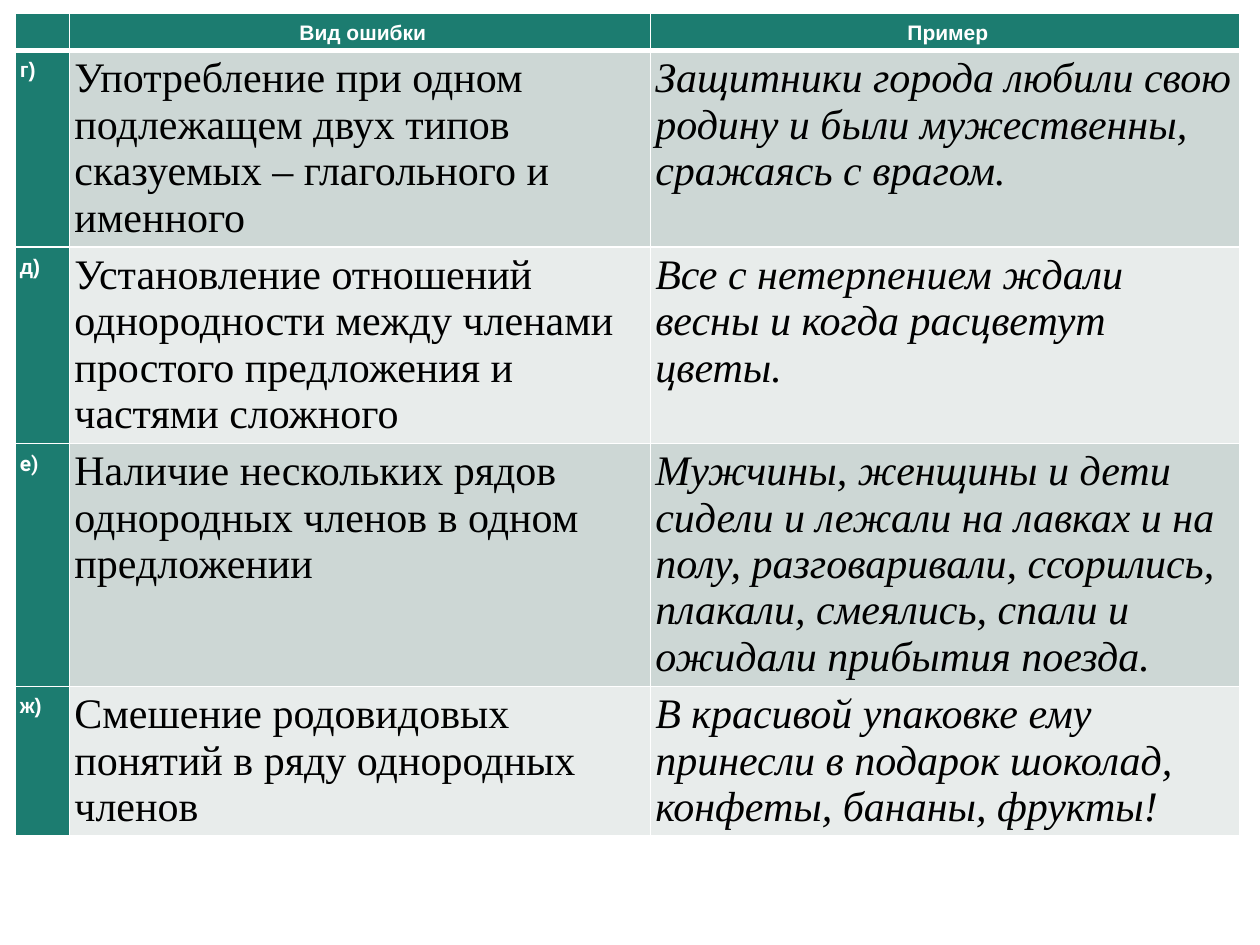
from lxml.etree import fromstring
from pptx import Presentation
from pptx.dml.color import RGBColor
from pptx.enum.text import PP_ALIGN
from pptx.oxml.ns import nsdecls
from pptx.util import Cm, Pt

COLORS = {
    "teal": "1C7C70",
    "dark_band": "CDD7D5",
    "light_band": "E8ECEB",
    "white": "FFFFFF",
    "black": "000000",
}
HEADERS = ["", " Вид ошибки", " Пример"]
ERRORS = [
    ("г)", "Употребление при одном подлежащем двух типов сказуемых – глагольного и именного",
     "Защитники города любили свою родину и были мужественны, сражаясь с врагом.", 4),
    ("д)", "Установление отношений однородности между членами простого предложения и частями сложного",
     "Все с нетерпением ждали весны и когда расцветут цветы.", 4),
    ("е)", "Наличие нескольких рядов однородных членов в одном предложении",
     "Мужчины, женщины и дети сидели и лежали на лавках и на полу, разговаривали, "
     "ссорились, плакали, смеялись, спали и ожидали прибытия поезда.", 5),
    ("ж)", "Смешение родовидовых понятий в ряду однородных членов",
     "В красивой упаковке ему принесли в подарок шоколад, конфеты, бананы, фрукты!", 3),
]


def write(tf, text, font="Times New Roman", size=24, color="black", bold=False,
          italic=False, align=PP_ALIGN.LEFT, spacing=1.0):
    p = tf.paragraphs[0]
    p.alignment = align
    p.line_spacing = spacing
    if not text:
        p._p.append(fromstring(f'<a:endParaRPr {nsdecls("a")} sz="{size * 100}"/>'))
        return
    r = p.add_run()
    r.text = text
    r.font.name = font
    r.font.size = Pt(size)
    r.font.bold = bold
    r.font.italic = italic
    r.font.color.rgb = RGBColor.from_string(COLORS[color])


class Deck:
    label = dict(font="Arial", size=12, color="white", bold=True, spacing=1.15)
    margin = Cm(0.1)

    def __init__(self, width, height):
        self.prs = Presentation()
        self.prs.slide_width, self.prs.slide_height = Cm(width), Cm(height)
        self.s = self.prs.slides.add_slide(self.prs.slide_layouts[6])

    def table(self, left, top, widths, heights):
        frame = self.s.shapes.add_table(len(heights), len(widths), Cm(left), Cm(top),
                                        Cm(sum(widths)), Cm(sum(heights)))
        table = frame.table
        for column, width in zip(table.columns, widths):
            column.width = Cm(width)
        for row, height in zip(table.rows, heights):
            row.height = Cm(height)
        return table

    def cell(self, cell, text, fill, bottom=1, top=1, **fmt):
        cell.margin_left = cell.margin_right = self.margin
        cell.margin_top = cell.margin_bottom = self.margin
        cell.fill.solid()
        cell.fill.fore_color.rgb = RGBColor.from_string(COLORS[fill])
        self.borders(cell, L=1, R=1, T=top, B=bottom)
        write(cell.text_frame, text, **fmt)

    def borders(self, cell, **sides):
        tcPr = cell._tc.get_or_add_tcPr()
        for i, (side, width) in enumerate(sides.items()):
            tcPr.insert(i, fromstring(
                f'<a:ln{side} {nsdecls("a")} w="{Pt(width)}"><a:solidFill>'
                f'<a:srgbClr val="{COLORS["white"]}"/></a:solidFill></a:ln{side}>'))


def main():
    deck = Deck(25.4, 19.05)
    heights = [0.74] + [0.2 + 0.94 * lines for *_, lines in ERRORS]
    table = deck.table(0.3, 0.27, [1.1, 11.71, 11.88], heights)
    for col, text in enumerate(HEADERS):
        deck.cell(table.cell(0, col), text, "teal", bottom=3,
                  align=PP_ALIGN.CENTER, **deck.label)
    for row, (letter, error, example, _) in enumerate(ERRORS, 1):
        band = "dark_band" if row % 2 else "light_band"
        top = 3 if row == 1 else 1
        label = dict(deck.label, font="Roboto" if letter == "е)" else "Arial")
        deck.cell(table.cell(row, 0), letter, "teal", top=top, **label)
        deck.cell(table.cell(row, 1), error, band, top=top)
        deck.cell(table.cell(row, 2), example, band, top=top, italic=True)
    deck.prs.save("out.pptx")


if __name__ == "__main__":
    main()
